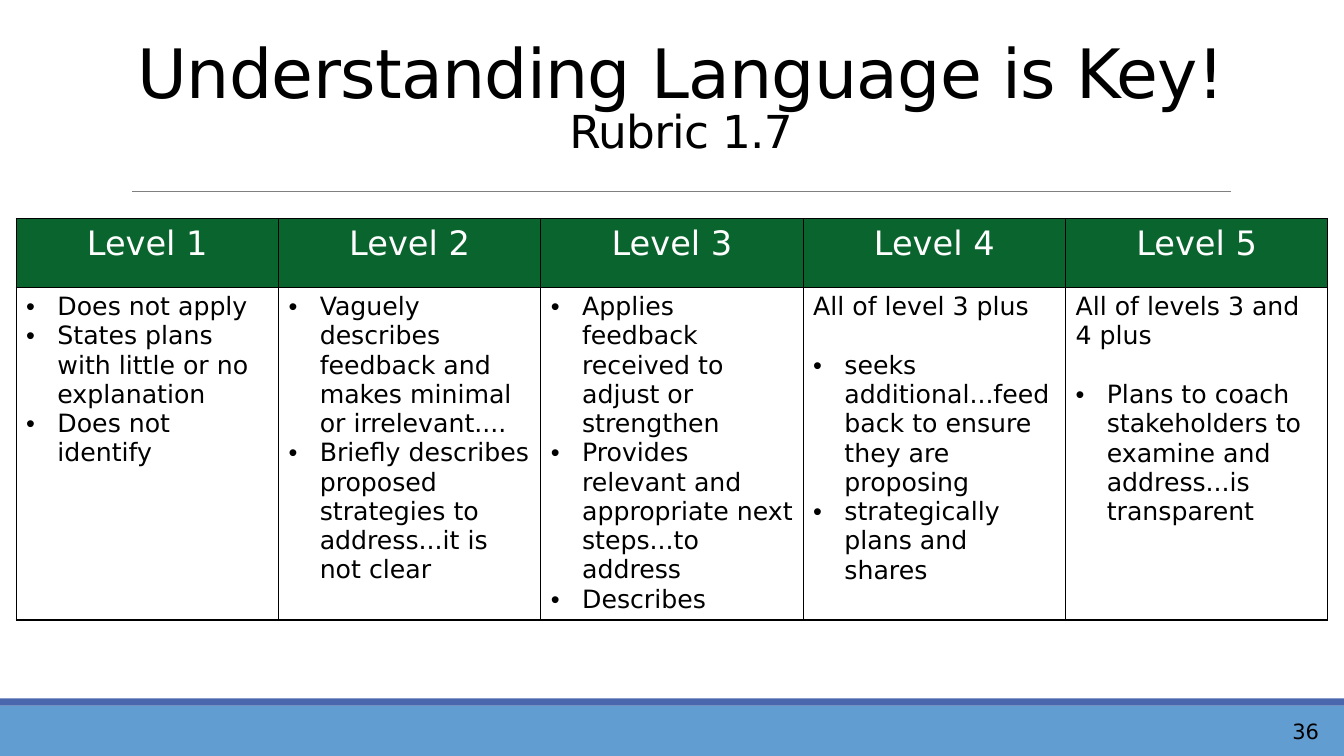
"""Build the Rubric 1.7 slide with its table of five levels."""
from dataclasses import dataclass

from lxml.etree import SubElement
from pptx import Presentation
from pptx.dml.color import RGBColor
from pptx.enum.shapes import MSO_CONNECTOR, MSO_SHAPE
from pptx.enum.text import MSO_ANCHOR, MSO_AUTO_SIZE, PP_ALIGN
from pptx.oxml import parse_xml
from pptx.oxml.ns import nsdecls, qn
from pptx.util import Inches, Pt

FONT = "DejaVu Sans"
BLACK = RGBColor(0x00, 0x00, 0x00)
WHITE = RGBColor(0xFF, 0xFF, 0xFF)
GRAY = RGBColor(0x80, 0x80, 0x80)
GREEN = RGBColor(0x09, 0x65, 0x2D)
SKY = RGBColor(0x62, 0x9D, 0xD1)
INDIGO = RGBColor(0x4A, 0x66, 0xAC)


@dataclass(frozen=True)
class Band:
    top: float
    height: float
    color: RGBColor


@dataclass(frozen=True)
class Level:
    name: str
    bullets: tuple[str, ...]
    intro: str = ""


BANDS = (Band(7, 0.5, SKY), Band(6.93, 0.07, INDIGO))
LEVELS = (
    Level("Level 1", ("Does not apply",
                      "States plans with little or no explanation",
                      "Does not identify")),
    Level("Level 2", ("Vaguely describes feedback and makes minimal or irrelevant....",
                      "Briefly describes proposed strategies to address...it is not clear")),
    Level("Level 3", ("Applies feedback received to adjust or strengthen",
                      "Provides relevant and appropriate next steps...to address",
                      "Describes")),
    Level("Level 4", ("seeks additional...feedback to ensure they are proposing",
                      "strategically plans and shares"),
          "All of level 3 plus"),
    Level("Level 5", ("Plans to coach stakeholders to examine and address...is transparent",),
          "All of levels 3 and 4 plus"),
)


def add_run(p, text: str, size: float, color: RGBColor = BLACK):
    r = p.add_run()
    r.text = text
    r.font.name = FONT
    r.font.size = Pt(size)
    r.font.bold = False
    r.font.color.rgb = color
    return r


def add_band(s, band: Band) -> None:
    sp = s.shapes.add_shape(MSO_SHAPE.RECTANGLE, 0, Inches(band.top),
                            Inches(13.33), Inches(band.height))
    sp.shadow.inherit = False
    sp.fill.solid()
    sp.fill.fore_color.rgb = band.color
    sp.line.fill.background()


def add_rule(s) -> None:
    line = s.shapes.add_connector(MSO_CONNECTOR.STRAIGHT, Inches(1.31), Inches(1.9),
                                  Inches(12.21), Inches(1.9))
    line.line.color.rgb = GRAY
    line.line.width = Pt(0.5)
    SubElement(line._element.spPr, qn("a:effectLst"))


def fill_title(s) -> None:
    title = s.shapes.title
    title.left, title.top = Inches(0.34), Inches(0.31)
    title.width, title.height = Inches(12.83), Inches(2.09)
    tf = title.text_frame
    tf.auto_size = MSO_AUTO_SIZE.NONE
    tf.word_wrap = True
    tf.vertical_anchor = MSO_ANCHOR.BOTTOM
    tf.margin_bottom = Inches(0.83)
    p = tf.paragraphs[0]
    p.alignment = PP_ALIGN.CENTER
    p.line_spacing = 0.85
    heading = add_run(p, "Understanding Language is Key!", 48.6)
    p.add_line_break()
    subtitle = add_run(p, "Rubric 1.7", 32.4)
    for r in (heading, subtitle):
        r.font._element.set("spc", "-50")


def format_cell(cell, color: RGBColor) -> None:
    cell.fill.solid()
    cell.fill.fore_color.rgb = color
    tc_pr = cell._tc.get_or_add_tcPr()
    for i, side in enumerate(("lnL", "lnR", "lnT", "lnB")):
        tc_pr.insert(i, parse_xml(
            f'<a:{side} {nsdecls("a")} w="12700"><a:solidFill>'
            f'<a:srgbClr val="{BLACK}"/></a:solidFill></a:{side}>'))


def set_bullet(p) -> None:
    p_pr = p._p.get_or_add_pPr()
    p_pr.set("marL", str(Inches(0.31)))
    p_pr.set("indent", str(Inches(-0.31)))
    SubElement(p_pr, qn("a:buFont"), typeface="Arial")
    SubElement(p_pr, qn("a:buChar"), char="•")


def fill_level(header, body, level: Level) -> None:
    format_cell(header, GREEN)
    p = header.text_frame.paragraphs[0]
    p.alignment = PP_ALIGN.CENTER
    add_run(p, level.name, 24, WHITE)

    format_cell(body, WHITE)
    tf = body.text_frame
    p = tf.paragraphs[0]
    if level.intro:
        add_run(p, level.intro, 18)
        p.space_after = Pt(21)
        p = tf.add_paragraph()
    for i, bullet in enumerate(level.bullets):
        if i:
            p = tf.add_paragraph()
        set_bullet(p)
        add_run(p, bullet, 18)


def add_rubric(s) -> None:
    table = s.shapes.add_table(2, len(LEVELS), Inches(0.16), Inches(2.17),
                               Inches(13.01), Inches(3.98)).table
    table.horz_banding = False
    table.rows[0].height = Inches(0.68)
    table.rows[1].height = Inches(3.3)
    for i, level in enumerate(LEVELS):
        fill_level(table.cell(0, i), table.cell(1, i), level)


def add_page_number(s) -> None:
    tf = s.shapes.add_textbox(Inches(12.46), Inches(7.03),
                              Inches(0.72), Inches(0.44)).text_frame
    tf.word_wrap = True
    tf.vertical_anchor = MSO_ANCHOR.MIDDLE
    p = tf.paragraphs[0]
    p.alignment = PP_ALIGN.RIGHT
    add_run(p, "36", 15)


def main() -> None:
    prs = Presentation()
    prs.slide_width, prs.slide_height = Inches(13.33), Inches(7.5)
    s = prs.slides.add_slide(prs.slide_layouts[5])
    for band in BANDS:
        add_band(s, band)
    add_rule(s)
    fill_title(s)
    add_rubric(s)
    add_page_number(s)
    prs.save("out.pptx")


if __name__ == "__main__":
    main()
